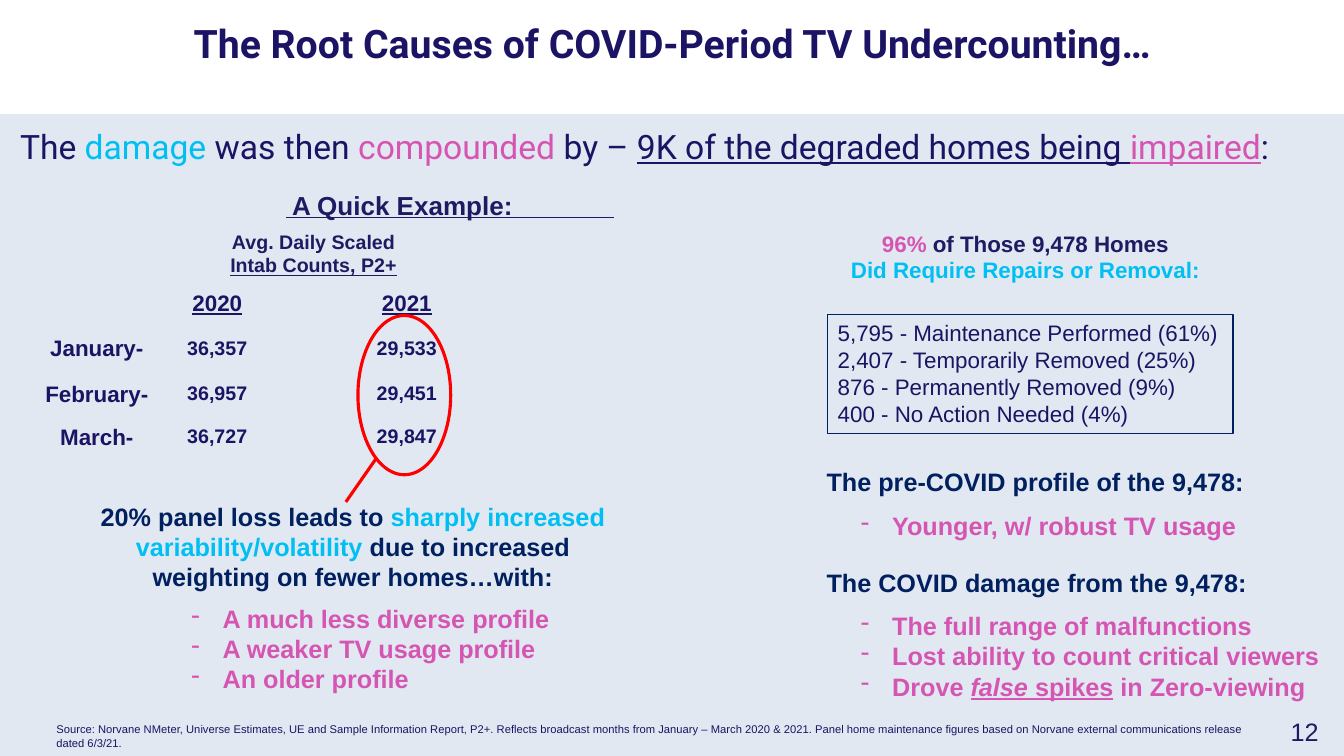
from dataclasses import dataclass

from lxml import etree
from pptx import Presentation
from pptx.dml.color import RGBColor
from pptx.enum import shapes, text
from pptx.oxml import ns
from pptx.util import Pt

PX = 9144  # 100 px to the inch


@dataclass(frozen=True)
class Theme:
    navy: str = "1B1464"
    ink: str = "1F1A62"
    deep: str = "002060"
    cyan: str = "00BFF2"
    pink: str = "D555B3"
    red: str = "FF0000"
    panel: str = "E2E8F1"
    title: float = 28
    lead: float = 24
    example: float = 18.6
    body: float = 18
    label: float = 16
    figure: float = 14
    source: float = 8


theme = Theme()
LEFT, CENTER = text.PP_ALIGN.LEFT, text.PP_ALIGN.CENTER
TOP, MIDDLE = text.MSO_ANCHOR.TOP, text.MSO_ANCHOR.MIDDLE


def px(*lengths):
    return [length * PX for length in lengths]


def write(box, paragraphs, size=theme.body, color=theme.navy, bold=False, underline=False,
          font="Arial", align=LEFT, anchor=TOP, bullet=None):
    """Fill box with paragraphs; each is a string or a list of (string, overrides)."""
    frame = box.text_frame
    frame.word_wrap = True
    frame.auto_size = text.MSO_AUTO_SIZE.NONE
    frame.vertical_anchor = anchor
    for index, spans in enumerate(paragraphs):
        para = frame.paragraphs[0] if index == 0 else frame.add_paragraph()
        para.alignment = align
        if bullet:
            properties = para._p.get_or_add_pPr()
            properties.set("marL", str(31 * PX))
            properties.set("indent", str(-31 * PX))
            etree.SubElement(properties, ns.qn("a:buChar")).set("char", bullet)
        for words, changes in [(spans, {})] if isinstance(spans, str) else spans:
            span = para.add_run()
            span.text = words
            span.font.name = font
            span.font.size = Pt(size)
            span.font.bold = bold
            span.font.italic = changes.get("italic", False)
            span.font.underline = changes.get("underline", underline)
            span.font.color.rgb = RGBColor.from_string(changes.get("color", color))


deck = Presentation()
deck.slide_width, deck.slide_height = px(1333, 750)
page = deck.slides.add_slide(deck.slide_layouts[5])

# Background panel and title
panel = page.shapes.add_shape(shapes.MSO_SHAPE.RECTANGLE, *px(0, 114, 1333, 636))
panel.shadow.inherit = False
panel.fill.solid()
panel.fill.fore_color.rgb = RGBColor.from_string(theme.panel)
panel.line.color.rgb = RGBColor.from_string(theme.panel)
panel.line.width = Pt(1)

title = page.shapes.title
title.left, title.top, title.width, title.height = px(0, 14, 1333, 57)
write(title, ["The Root Causes of COVID-Period TV Undercounting…"],
      size=theme.title, bold=True, font="Roboto", align=CENTER)

# Yearly counts by month
year_lefts = {"2020": 157, "2021": 345}
month_counts = {
    "January-": (328, "36,357", "29,533"),
    "February-": (373, "36,957", "29,451"),
    "March-": (416, "36,727", "29,847"),
}
heading = dict(size=theme.label, bold=True, align=CENTER)
for year, left in year_lefts.items():
    box = page.shapes.add_textbox(*px(left, 282, 117, 37))
    write(box, [year], underline=True, **heading)
for month, (top, *counts) in month_counts.items():
    box = page.shapes.add_textbox(*px(30, top - 1, 132, 37))
    write(box, [month], **heading)
    for left, count in zip(year_lefts.values(), counts):
        box = page.shapes.add_textbox(*px(left, top, 117, 34))
        write(box, [count], size=theme.figure, bold=True, align=CENTER)

# Ring around 2021, its pointer and the rule under the example heading
ring = page.shapes.add_shape(shapes.MSO_SHAPE.OVAL, *px(355, 313, 92, 158))
ring.shadow.inherit = False
ring.fill.background()
ring.line.color.rgb = RGBColor.from_string(theme.red)
ring.line.width = Pt(2.25)

for ends, color, width in [
    ((373, 455, 343, 498), theme.red, 2.25),
    ((284, 216, 609, 216), theme.ink, 1),
]:
    line = page.shapes.add_connector(shapes.MSO_CONNECTOR.STRAIGHT, *px(*ends))
    line.line.color.rgb = RGBColor.from_string(color)
    line.line.width = Pt(width)
    etree.SubElement(line._element.spPr, ns.qn("a:effectLst"))

# Repairs box
repairs = page.shapes.add_shape(shapes.MSO_SHAPE.RECTANGLE, *px(821, 312, 402, 118))
repairs.shadow.inherit = False
repairs.fill.background()
repairs.line.color.rgb = RGBColor.from_string(theme.deep)
repairs.line.width = Pt(1)
write(repairs, [
    "5,795 - Maintenance Performed (61%)",
    "2,407 - Temporarily Removed (25%)",
    "876 - Permanently Removed (9%)",
    "400 - No Action Needed (4%)",
], size=theme.label)

# Remaining text
cyan, pink = dict(color=theme.cyan), dict(color=theme.pink)
underlined = dict(underline=True)
statement = dict(color=theme.deep, bold=True, anchor=MIDDLE)
bullets = dict(color=theme.pink, bold=True, anchor=MIDDLE, bullet="-")

blocks = [
    ((10, 120, 1312, 50), [[
        ("The ", {}), ("damage", cyan), (" was then ", {}), ("compounded ", pink), ("by – ", {}),
        ("9K of the degraded homes being ", underlined), ("impaired", pink | underlined), (":", {}),
    ]], dict(size=theme.lead, font="Roboto")),
    ((280, 183, 387, 41), ["A Quick Example:"],
     dict(size=theme.example, color=theme.ink, bold=True)),
    ((189, 223, 244, 57), ["Avg. Daily Scaled", [("Intab Counts, P2+", underlined)]],
     dict(size=theme.figure, color=theme.ink, bold=True, align=CENTER)),
    ((86, 509, 528, 66), [[
        ("20% panel loss leads to ", {}), ("sharply increased variability/volatility", cyan),
        (" due to increased weighting on fewer homes…with:", {}),
    ]], statement | dict(align=CENTER)),
    ((180, 596, 386, 95),
     ["A much less diverse profile", "A weaker TV usage profile", "An older profile"], bullets),
    ((816, 223, 402, 64), [
        [("96%", pink), (" of Those 9,478 Homes", {})],
        [("Did Require Repairs or Removal:", cyan)],
    ], dict(size=theme.label, color=theme.ink, bold=True, align=CENTER)),
    ((810, 456, 464, 44), ["The pre-COVID profile of the 9,478:"], statement),
    ((844, 502, 401, 38), ["Younger, w/ robust TV usage"], bullets),
    ((810, 556, 464, 44), ["The COVID damage from the 9,478:"], statement),
    ((844, 603, 489, 95), [
        "The full range of malfunctions",
        "Lost ability to count critical viewers",
        [("Drove ", {}), ("false", underlined | dict(italic=True)), (" spikes", underlined),
         (" in Zero-viewing", {})],
    ], bullets),
    ((46, 712, 1199, 37), [
        "Source: Norvane NMeter, Universe Estimates, UE and Sample Information Report, P2+. "
        "Reflects broadcast months from January – March 2020 & 2021. Panel home maintenance "
        "figures based on Norvane external communications release dated 6/3/21.",
    ], dict(size=theme.source)),
    ((262 + 1000, 706, 64, 40), ["12"], dict(color=theme.ink, align=CENTER)),
]
for place, paragraphs, style in blocks:
    write(page.shapes.add_textbox(*px(*place)), paragraphs, **style)

deck.save("out.pptx")
